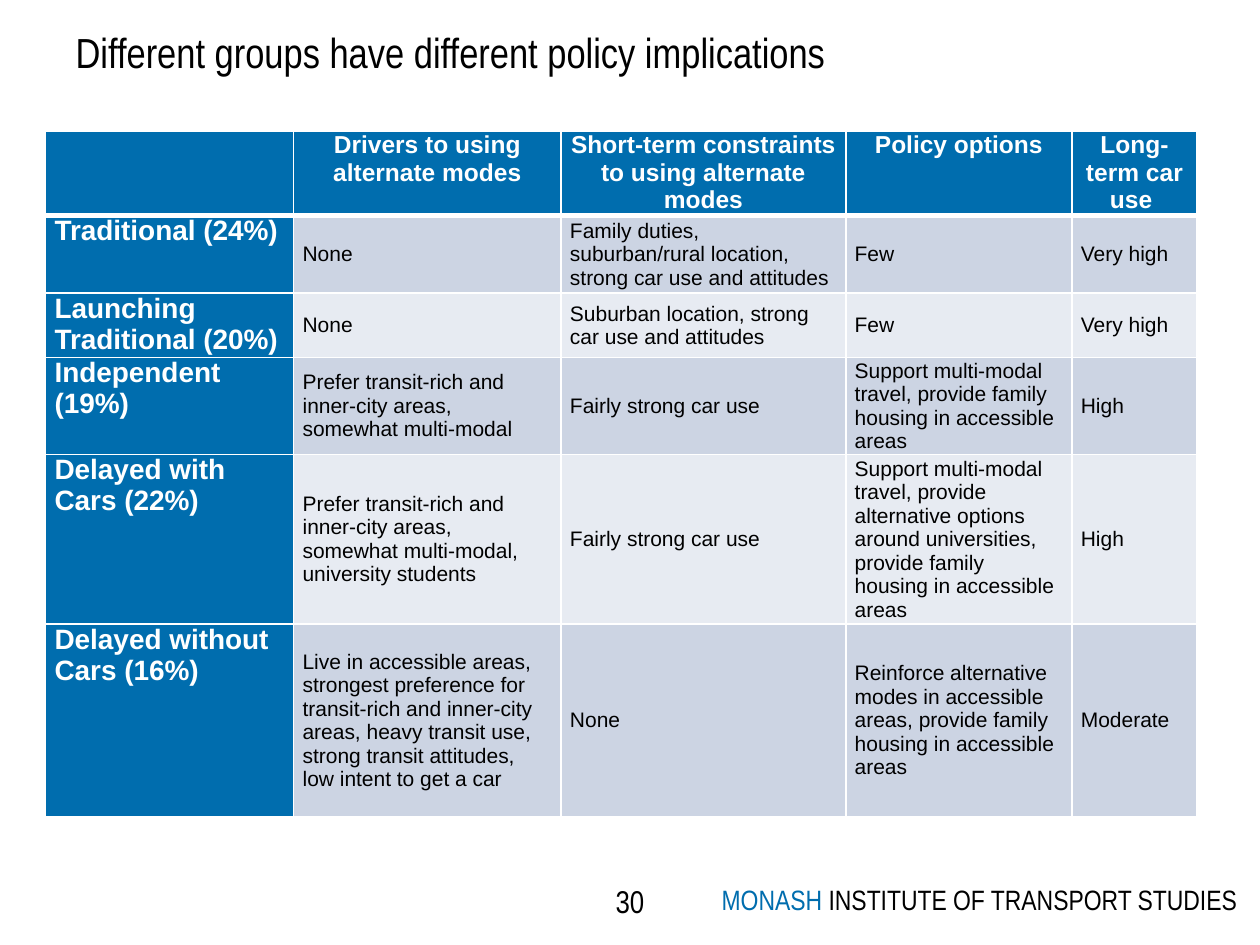
from dataclasses import dataclass

from lxml.etree import SubElement
from pptx import Presentation
from pptx.dml.color import RGBColor
from pptx.enum.text import MSO_ANCHOR, MSO_AUTO_SIZE, PP_ALIGN
from pptx.oxml.ns import qn
from pptx.slide import Slide
from pptx.table import _Cell
from pptx.text.text import TextFrame, _Paragraph
from pptx.util import Cm, Pt

BLUE = "006DAE"
WHITE = "FFFFFF"
BLACK = "000000"
BANDS = ("CCD4E3", "E7EBF2")
COLUMN_WIDTHS = (5.0, 5.39, 5.74, 4.56, 2.52)
ROW_HEIGHTS = (1.7, 1.56, 1.3, 1.95, 3.42, 3.89)
ROWS = (
    ("", "Drivers to using alternate modes",
     "Short-term constraints to using alternate modes",
     "Policy options", "Long-term car use "),
    ("Traditional (24%)", "None",
     "Family duties, suburban/rural location, strong car use and attitudes",
     "Few", "Very high"),
    ("Launching Traditional (20%)", "None",
     "Suburban location, strong car use and attitudes",
     "Few", "Very high"),
    ("Independent (19%)",
     "Prefer transit-rich and inner-city areas, somewhat multi-modal",
     "Fairly strong car use",
     "Support multi-modal travel, provide family housing in accessible areas",
     "High"),
    ("Delayed with Cars (22%)",
     "Prefer transit-rich and inner-city areas, somewhat multi-modal, "
     "university students",
     "Fairly strong car use",
     "Support multi-modal travel, provide alternative options around "
     "universities, provide family housing in accessible areas",
     "High"),
    ("Delayed without Cars (16%)",
     "Live in accessible areas, strongest preference for transit-rich and "
     "inner-city areas, heavy transit use, strong transit attitudes, "
     "low intent to get a car",
     "None",
     "Reinforce alternative modes in accessible areas, provide family "
     "housing in accessible areas",
     "Moderate"),
)


@dataclass(frozen=True)
class TextStyle:
    size: float
    color: str = BLACK
    bold: bool = False
    font_name: str = "Arial"
    alignment: PP_ALIGN = PP_ALIGN.LEFT
    anchor: MSO_ANCHOR = MSO_ANCHOR.TOP


HEADER = TextStyle(14, WHITE, True, alignment=PP_ALIGN.CENTER)
GROUP = TextStyle(16, WHITE, True)
BODY = TextStyle(12, anchor=MSO_ANCHOR.MIDDLE)
TITLE = TextStyle(24, font_name="Arial Narrow")
FOOTER = TextStyle(16, font_name="Arial Narrow")
NUMBER = TextStyle(18, font_name="Arial Narrow", alignment=PP_ALIGN.CENTER,
                   anchor=MSO_ANCHOR.MIDDLE)


def rgb(color: str) -> RGBColor:
    return RGBColor.from_string(color)


def format_paragraph(paragraph: _Paragraph, style: TextStyle) -> None:
    paragraph.alignment = style.alignment
    paragraph.font.name = style.font_name
    paragraph.font.size = Pt(style.size)
    paragraph.font.bold = style.bold
    paragraph.font.color.rgb = rgb(style.color)


def write_frame(frame: TextFrame, text: str, style: TextStyle) -> None:
    frame.word_wrap = True
    frame.auto_size = MSO_AUTO_SIZE.NONE
    frame.vertical_anchor = style.anchor
    frame.text = text
    format_paragraph(frame.paragraphs[0], style)


def add_borders(cell: _Cell, bottom_width: float) -> None:
    properties = cell._tc.get_or_add_tcPr()
    widths = {"a:lnL": 1, "a:lnR": 1, "a:lnT": 1, "a:lnB": bottom_width}
    for position, (tag, width) in enumerate(widths.items()):
        line = SubElement(properties, qn(tag), w=str(Pt(width)))
        fill = SubElement(line, qn("a:solidFill"))
        SubElement(fill, qn("a:srgbClr"), val=WHITE)
        properties.insert(position, line)


def write_cell(cell: _Cell, text: str, style: TextStyle, fill: str,
               bottom_width: float) -> None:
    cell.fill.solid()
    cell.fill.fore_color.rgb = rgb(fill)
    add_borders(cell, bottom_width)
    cell.margin_left = cell.margin_right = Cm(0.18)
    cell.margin_top = cell.margin_bottom = 0
    cell.vertical_anchor = style.anchor
    cell.text = text
    format_paragraph(cell.text_frame.paragraphs[0], style)


def add_policy_table(slide: Slide) -> None:
    table = slide.shapes.add_table(
        len(ROWS), len(COLUMN_WIDTHS), Cm(0.92), Cm(2.65),
        Cm(sum(COLUMN_WIDTHS)), Cm(sum(ROW_HEIGHTS))).table
    table.first_row = table.horz_banding = False
    for column, width in zip(table.columns, COLUMN_WIDTHS):
        column.width = Cm(width)
    for row, height in zip(table.rows, ROW_HEIGHTS):
        row.height = Cm(height)
    for row_index, texts in enumerate(ROWS):
        for column_index, text in enumerate(texts):
            if row_index == 0:
                style, fill = HEADER, BLUE
            elif column_index == 0:
                style, fill = GROUP, BLUE
            else:
                style, fill = BODY, BANDS[(row_index - 1) % 2]
            write_cell(table.cell(row_index, column_index), text, style, fill,
                       3 if row_index == 0 else 1)


def add_title(slide: Slide) -> None:
    title = slide.shapes.title
    title.left, title.top = Cm(1.27), Cm(0.4)
    title.width, title.height = Cm(22.86), Cm(1.42)
    write_frame(title.text_frame,
                "Different groups have different policy implications", TITLE)


def add_footer(slide: Slide) -> None:
    institute = slide.shapes.add_textbox(Cm(14.55), Cm(17.8), Cm(10.85), Cm(0.69))
    frame = institute.text_frame
    frame.margin_left = frame.margin_top = frame.margin_bottom = 0
    write_frame(frame, "MONASH ", FOOTER)
    paragraph = frame.paragraphs[0]
    paragraph.runs[0].font.color.rgb = rgb(BLUE)
    paragraph.add_run().text = "INSTITUTE OF TRANSPORT STUDIES"

    number = slide.shapes.add_textbox(Cm(11.33), Cm(17.65), Cm(2.74), Cm(1.02))
    write_frame(number.text_frame, "30", NUMBER)


def main() -> None:
    presentation = Presentation()
    presentation.slide_width, presentation.slide_height = Cm(25.4), Cm(19.05)
    slide = presentation.slides.add_slide(presentation.slide_layouts[5])
    add_footer(slide)
    add_title(slide)
    add_policy_table(slide)
    presentation.save("out.pptx")


if __name__ == "__main__":
    main()
